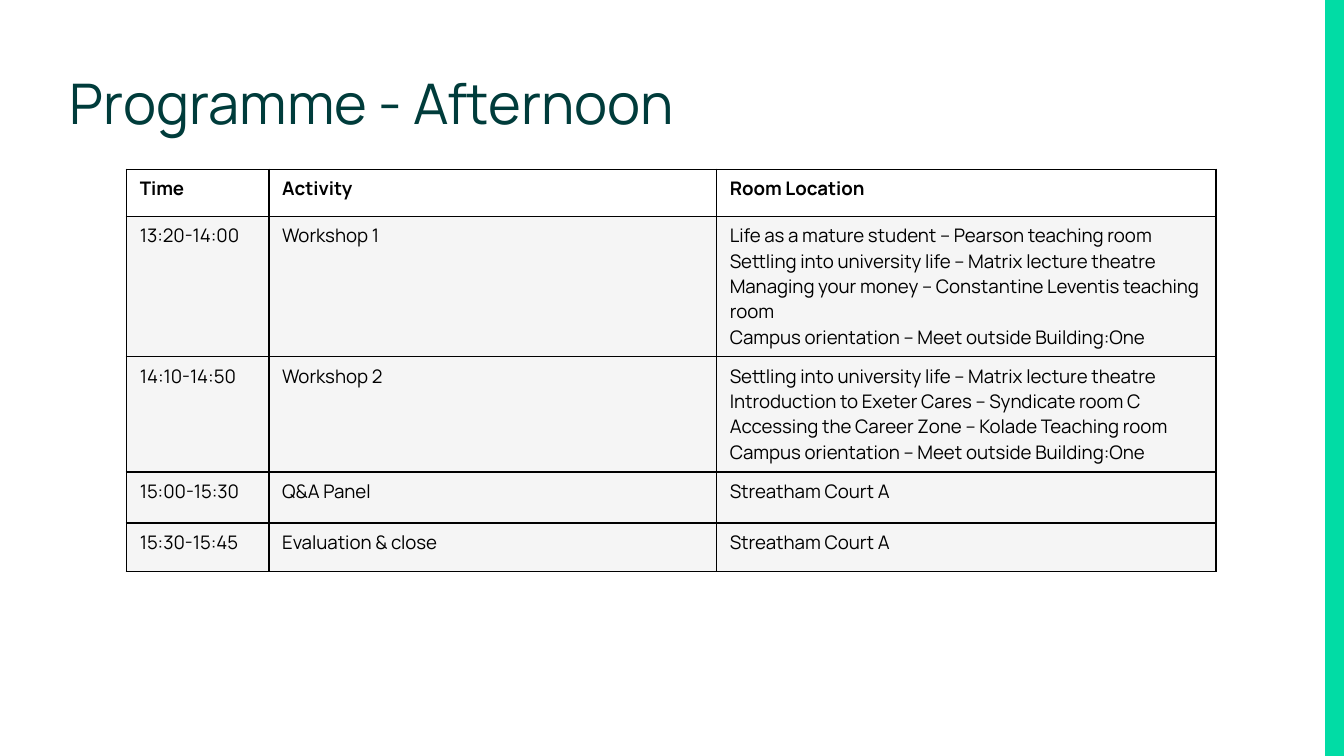
"""Build the afternoon programme slide with its timetable."""
from lxml.etree import SubElement
from pptx import Presentation
from pptx.dml.color import RGBColor
from pptx.enum.shapes import MSO_SHAPE as Shape
from pptx.enum.text import MSO_ANCHOR as Anchor, PP_ALIGN as Align
from pptx.oxml.ns import qn
from pptx.util import Inches, Pt

TITLE = "Programme - Afternoon"
HEADINGS = ("Time", "Activity", "Room Location")
SESSIONS = [
    ("13:20-14:00", "Workshop 1", [
        "Life as a mature student – Pearson teaching room",
        "Settling into university life – Matrix lecture theatre",
        "Managing your money – Constantine Leventis teaching room",
        "Campus orientation – Meet outside Building:One",
    ]),
    ("14:10-14:50", "Workshop 2", [
        "Settling into university life – Matrix lecture theatre",
        "Introduction to Exeter Cares – Syndicate room C",
        "Accessing the Career Zone – Kolade Teaching room",
        "Campus orientation – Meet outside Building:One",
    ]),
    ("15:00-15:30", "Q&A Panel", ["Streatham Court A"]),
    ("15:30-15:45", "Evaluation & close", ["Streatham Court A"]),
]

FONT = "Manrope"
GREEN = RGBColor(0x01, 0xDC, 0xA5)
TEAL = RGBColor(0x00, 0x3C, 0x3B)
BLACK = RGBColor(0x00, 0x00, 0x00)
GREY = RGBColor(0xF5, 0xF5, 0xF5)
WIDTH = 10
HEIGHT = WIDTH * 9 / 16
BAR_WIDTH = 0.14
COLUMN_WIDTHS = (1.06, 3.33, 3.72)
ROW_HEIGHTS = (0.35, 1.04, 0.86, 0.38, 0.36)


def style(paragraph, size, color, bold=False):
    font = paragraph.font
    font.name, font.size, font.bold = FONT, Pt(size), bold
    font.color.rgb = color


def add_borders(cell):
    properties = cell._tc.get_or_add_tcPr()
    for position, side in enumerate(("a:lnL", "a:lnR", "a:lnT", "a:lnB")):
        border = properties.makeelement(qn(side), {"w": str(Pt(1))})
        fill = SubElement(border, qn("a:solidFill"))
        SubElement(fill, qn("a:srgbClr"), val=str(BLACK))
        properties.insert(position, border)


def fill_cell(cell, lines, is_heading):
    cell.text = "\n".join(lines)
    for paragraph in cell.text_frame.paragraphs:
        style(paragraph, 10, BLACK, is_heading)
    if is_heading:
        cell.fill.background()
    else:
        cell.fill.solid()
        cell.fill.fore_color.rgb = GREY
    add_borders(cell)


def add_title(slide):
    title = slide.shapes.title
    title.left, title.top = Inches(0.43), Inches(0.51)
    title.width, title.height = Inches(7.57), Inches(0.51)
    frame = title.text_frame
    frame.text = TITLE
    frame.vertical_anchor = Anchor.MIDDLE
    frame.margin_left = Inches(0.09)
    frame.margin_top, frame.margin_bottom = Inches(0.05), Inches(0)
    heading = frame.paragraphs[0]
    heading.alignment, heading.line_spacing = Align.LEFT, 0.9
    style(heading, 30, TEAL)


def add_side_bar(slide):
    bar = slide.shapes.add_shape(
        Shape.RECTANGLE, Inches(WIDTH - BAR_WIDTH), 0, Inches(BAR_WIDTH), Inches(HEIGHT))
    bar.shadow.inherit = False
    bar.fill.solid()
    bar.fill.fore_color.rgb = GREEN
    bar.line.fill.background()


def add_timetable(slide):
    rows = [[[heading] for heading in HEADINGS]]
    rows += [[[time], [activity], rooms] for time, activity, rooms in SESSIONS]
    timetable = slide.shapes.add_table(
        len(rows), len(HEADINGS), Inches(0.94), Inches(1.26),
        Inches(sum(COLUMN_WIDTHS)), Inches(sum(ROW_HEIGHTS))).table
    timetable.horz_banding = False
    for column, width in zip(timetable.columns, COLUMN_WIDTHS):
        column.width = Inches(width)
    for row, height in zip(timetable.rows, ROW_HEIGHTS):
        row.height = Inches(height)
    for r, row in enumerate(rows):
        for c, lines in enumerate(row):
            fill_cell(timetable.cell(r, c), lines, r == 0)


def main():
    deck = Presentation()
    deck.slide_width, deck.slide_height = Inches(WIDTH), Inches(HEIGHT)
    slide = deck.slides.add_slide(deck.slide_layouts[5])
    add_side_bar(slide)
    add_title(slide)
    add_timetable(slide)
    deck.save("out.pptx")


if __name__ == "__main__":
    main()
